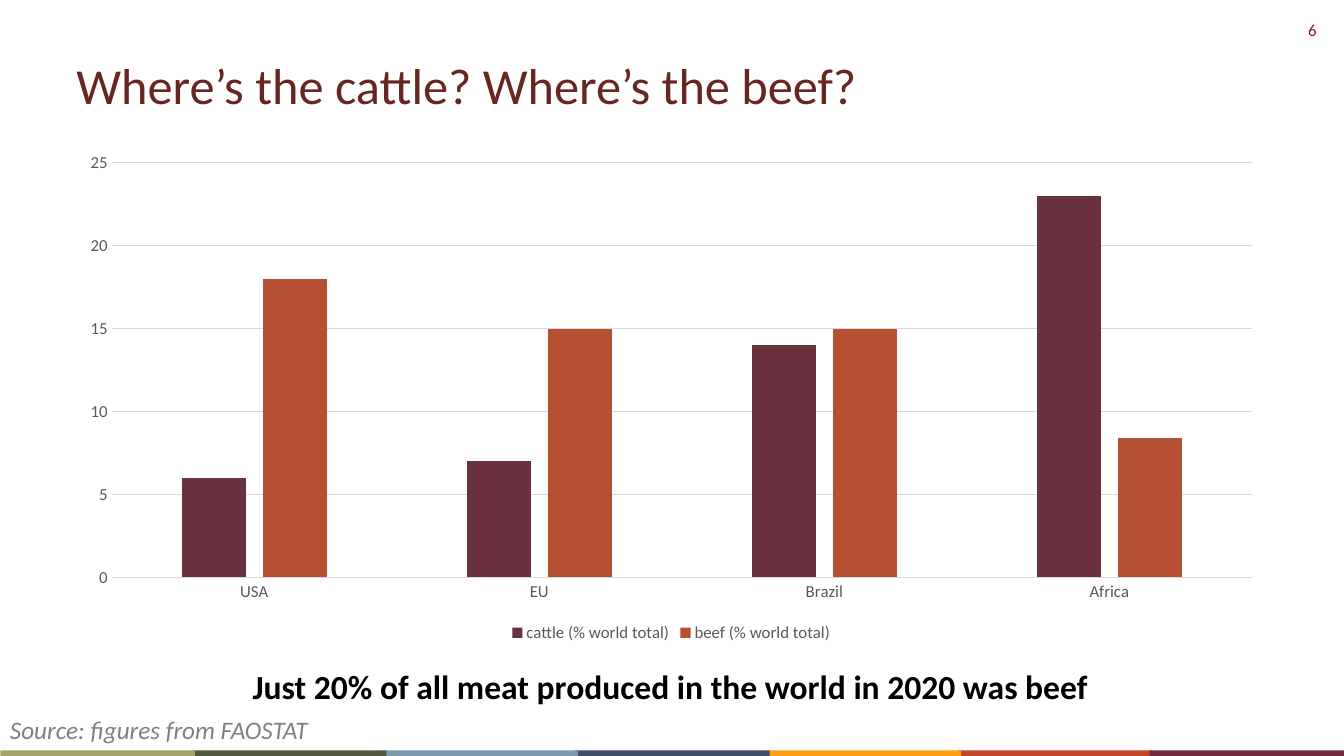
from dataclasses import dataclass

from pptx import Presentation
from pptx.chart.data import CategoryChartData
from pptx.dml.color import RGBColor
from pptx.enum.chart import XL_CHART_TYPE, XL_LEGEND_POSITION, XL_TICK_MARK
from pptx.enum.shapes import MSO_SHAPE
from pptx.enum.text import MSO_ANCHOR, PP_ALIGN
from pptx.util import Pt


@dataclass(frozen=True)
class Theme:
    font: str = "Calibri"
    title: str = "682622"
    page_number: str = "762123"
    caption: str = "000000"
    source: str = "808080"
    label: str = "595959"
    rule: str = "D9D9D9"
    paper: str = "FFFFFF"
    series: tuple = ("69303D", "B65033")
    stripes: tuple = ("A3A467", "53593E", "7C98AB", "404E65",
                      "FF9E16", "C34628", "712C3D")
    title_size: int = 36
    caption_size: int = 24
    source_size: int = 18
    label_size: int = 12


def color(code):
    return RGBColor.from_string(code)


class Page:
    def __init__(self, deck, theme):
        self.theme = theme
        self.slide = deck.slides.add_slide(deck.slide_layouts[6])

    def style(self, font, size, code, bold=False, italic=False):
        font.name = self.theme.font
        font.size = Pt(size)
        font.color.rgb = color(code)
        font.bold = bold
        font.italic = italic

    def bar(self, left, top, width, height, code):
        shape = self.slide.shapes.add_shape(
            MSO_SHAPE.RECTANGLE, Pt(left), Pt(top), Pt(width), Pt(height))
        shape.shadow.inherit = False
        shape.fill.solid()
        shape.fill.fore_color.rgb = color(code)
        shape.line.fill.background()

    def text(self, words, frame, size, code, align=PP_ALIGN.LEFT,
             anchor=MSO_ANCHOR.MIDDLE, wrap=True, spacing=None, fill=None,
             bold=False, italic=False):
        box = self.slide.shapes.add_textbox(*map(Pt, frame))
        if fill:
            box.fill.solid()
            box.fill.fore_color.rgb = color(fill)
        box.text_frame.word_wrap = wrap
        box.text_frame.vertical_anchor = anchor
        para = box.text_frame.paragraphs[0]
        para.alignment = align
        if spacing:
            para.line_spacing = Pt(spacing)
        span = para.add_run()
        span.text = words
        self.style(span.font, size, code, bold, italic)

    def rule(self, line):
        line.color.rgb = color(self.theme.rule)
        line.width = Pt(0.75)

    def column_chart(self, frame, categories, series, top_value, step):
        data = CategoryChartData()
        data.categories = categories
        for name, values in series.items():
            data.add_series(name, values)
        chart = self.slide.shapes.add_chart(
            XL_CHART_TYPE.COLUMN_CLUSTERED, *map(Pt, frame), data).chart
        theme = self.theme
        self.style(chart.font, theme.label_size, theme.label)
        chart.has_title = False

        chart.has_legend = True
        chart.legend.position = XL_LEGEND_POSITION.BOTTOM
        chart.legend.include_in_layout = False
        self.style(chart.legend.font, theme.label_size, theme.label)

        for axis in (chart.category_axis, chart.value_axis):
            axis.major_tick_mark = XL_TICK_MARK.NONE
            axis.minor_tick_mark = XL_TICK_MARK.NONE
            self.style(axis.tick_labels.font, theme.label_size, theme.label)
        self.rule(chart.category_axis.format.line)
        values_axis = chart.value_axis
        values_axis.minimum_scale = 0
        values_axis.maximum_scale = top_value
        values_axis.major_unit = step
        values_axis.format.line.fill.background()
        self.rule(values_axis.major_gridlines.format.line)

        plot = chart.plots[0]
        plot.gap_width = 219
        plot.overlap = -27
        plot.vary_by_categories = False
        for columns, code in zip(plot.series, theme.series):
            columns.invert_if_negative = False
            columns.format.fill.solid()
            columns.format.fill.fore_color.rgb = color(code)


def main():
    deck = Presentation()
    deck.slide_width, deck.slide_height = Pt(960), Pt(540)
    theme = Theme()
    page = Page(deck, theme)

    page.text("6", (897, 10, 50.5, 22), theme.label_size, theme.page_number,
              align=PP_ALIGN.RIGHT)
    stripe_pitch = 136.8
    last = len(theme.stripes) - 1
    # Each stripe overlaps the one to its right; the last lies over its neighbour.
    for index in (last - 1, last, *reversed(range(last - 1))):
        page.bar(0.3 + index * stripe_pitch, 536, 139, 4.3, theme.stripes[index])

    page.text("Where’s the cattle? Where’s the beef?", (47.5, 34, 864, 53),
              theme.title_size, theme.title)
    page.column_chart(
        (47.5, 102, 864, 360),
        ("USA", "EU", "Brazil", "Africa"),
        {"cattle (% world total)": (6, 7, 14, 23),
         "beef (% world total)": (18, 15, 15, 8.4)},
        top_value=25, step=5)
    page.text("Just 20% of all meat produced in the world in 2020 was beef",
              (170.6, 468.7, 616.3, 38.2), theme.caption_size, theme.caption,
              align=PP_ALIGN.CENTER, anchor=MSO_ANCHOR.TOP, wrap=False,
              spacing=32, bold=True)
    page.text("Source: figures from FAOSTAT", (0, 506.2, 650, 29),
              theme.source_size, theme.source, fill=theme.paper, italic=True)
    deck.save("out.pptx")


if __name__ == "__main__":
    main()
